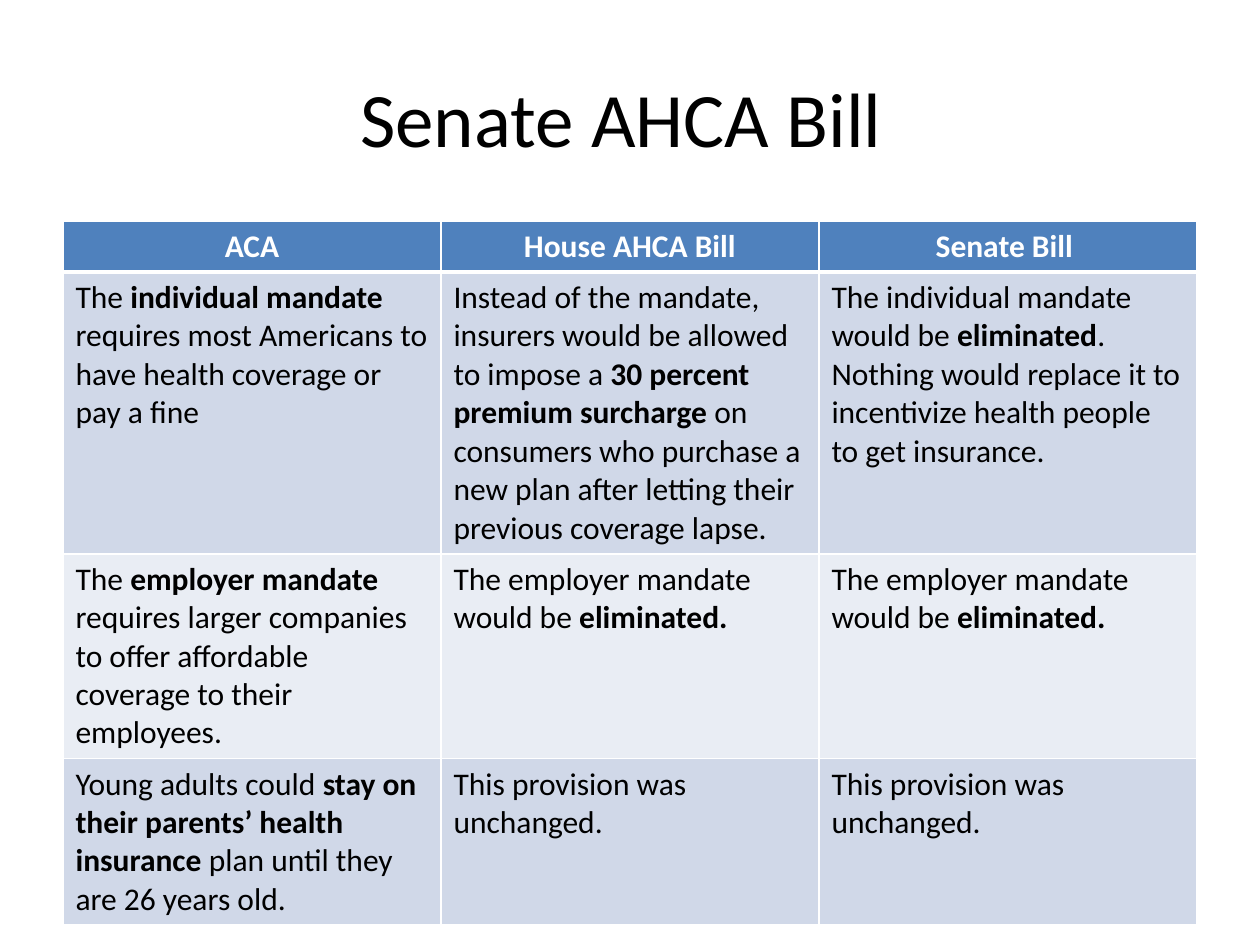
from lxml import etree
from pptx import Presentation
from pptx.dml.color import RGBColor
from pptx.enum.text import MSO_ANCHOR, PP_ALIGN
from pptx.oxml.ns import qn
from pptx.util import Emu, Pt

PX = 914400 // 126
CENTER, LEFT, MIDDLE = PP_ALIGN.CENTER, PP_ALIGN.LEFT, MSO_ANCHOR.MIDDLE
FONT = "Calibri"
BLACK, WHITE = "000000", "FFFFFF"
HEADER_FILL, BAND_FILLS = "4F81BD", ("D0D8E8", "E9EDF4")

TITLE = "Senate AHCA Bill "
HEADINGS = ["ACA", "House AHCA Bill", "Senate Bill "]
# Asterisks enclose bold words
PROVISIONS = [
    ["The *individual mandate *requires most Americans to have health coverage or pay a fine",
     "Instead of the mandate, insurers would be allowed to impose a *30 percent premium "
     "surcharge *on consumers who purchase a new plan after letting their previous "
     "coverage lapse.",
     "The individual mandate would be *eliminated*. Nothing would replace it to "
     "incentivize health people to get insurance."],
    ["The *employer mandate *requires larger companies to offer affordable coverage "
     "to their employees."] + ["The employer mandate would be *eliminated.*"] * 2,
    ["Young adults could *stay on their parents’ health insurance *plan until they "
     "are 26 years old."] + ["This provision was unchanged."] * 2,
]
ROW_HEIGHTS = [51, 277, 202, 164]


def px(length):
    return Emu(length * PX)


def color(value):
    return RGBColor.from_string(value)


def style(span, size, value, bold=False):
    span.font.name = FONT
    span.font.size = Pt(size)
    span.font.bold = bold
    span.font.color.rgb = color(value)


def add_title(page, left, top, width, height):
    title = page.shapes.title
    title.left, title.top = px(left), px(top)
    title.width, title.height = px(width), px(height)
    title.text_frame.text = TITLE
    title.text_frame.vertical_anchor = MIDDLE
    para = title.text_frame.paragraphs[0]
    para.alignment = CENTER
    style(para.runs[0], 44, BLACK)


def set_borders(cell, bottom_width, top_width):
    """Put white borders ahead of the cell's fill, as the schema requires."""
    properties = cell._tc.get_or_add_tcPr()
    widths = {"a:lnL": 1, "a:lnR": 1, "a:lnT": top_width, "a:lnB": bottom_width}
    for position, (tag, width) in enumerate(widths.items()):
        line = etree.Element(qn(tag), w=str(Pt(width)))
        fill = etree.SubElement(line, qn("a:solidFill"))
        etree.SubElement(fill, qn("a:srgbClr"), val=WHITE)
        properties.insert(position, line)


def fill_cell(cell, text, row):
    header = row == 0
    cell.fill.solid()
    cell.fill.fore_color.rgb = color(HEADER_FILL if header else BAND_FILLS[(row - 1) % 2])
    set_borders(cell, 3 if header else 1, 3 if row == 1 else 1)
    para = cell.text_frame.paragraphs[0]
    para.alignment = CENTER if header else LEFT
    for index, part in enumerate(text.split("*")):
        if part:
            span = para.add_run()
            span.text = part
            style(span, 18, WHITE if header else BLACK, header or index % 2 == 1)


def add_comparison(page, left, top, width):
    rows = [HEADINGS] + PROVISIONS
    table = page.shapes.add_table(len(rows), len(HEADINGS), px(left), px(top),
                                  px(width), px(sum(ROW_HEIGHTS))).table
    for column in table.columns:
        column.width = px(width // len(HEADINGS))
    for row, texts in enumerate(rows):
        table.rows[row].height = px(ROW_HEIGHTS[row])
        for column, text in enumerate(texts):
            fill_cell(table.cell(row, column), text, row)


def main():
    deck = Presentation()
    deck.slide_width, deck.slide_height = px(1260), px(945)
    page = deck.slides.add_slide(deck.slide_layouts[5])
    add_title(page, 63, 38, 1134, 158)
    add_comparison(page, 63, 221, 1134)
    deck.save("out.pptx")


if __name__ == "__main__":
    main()
